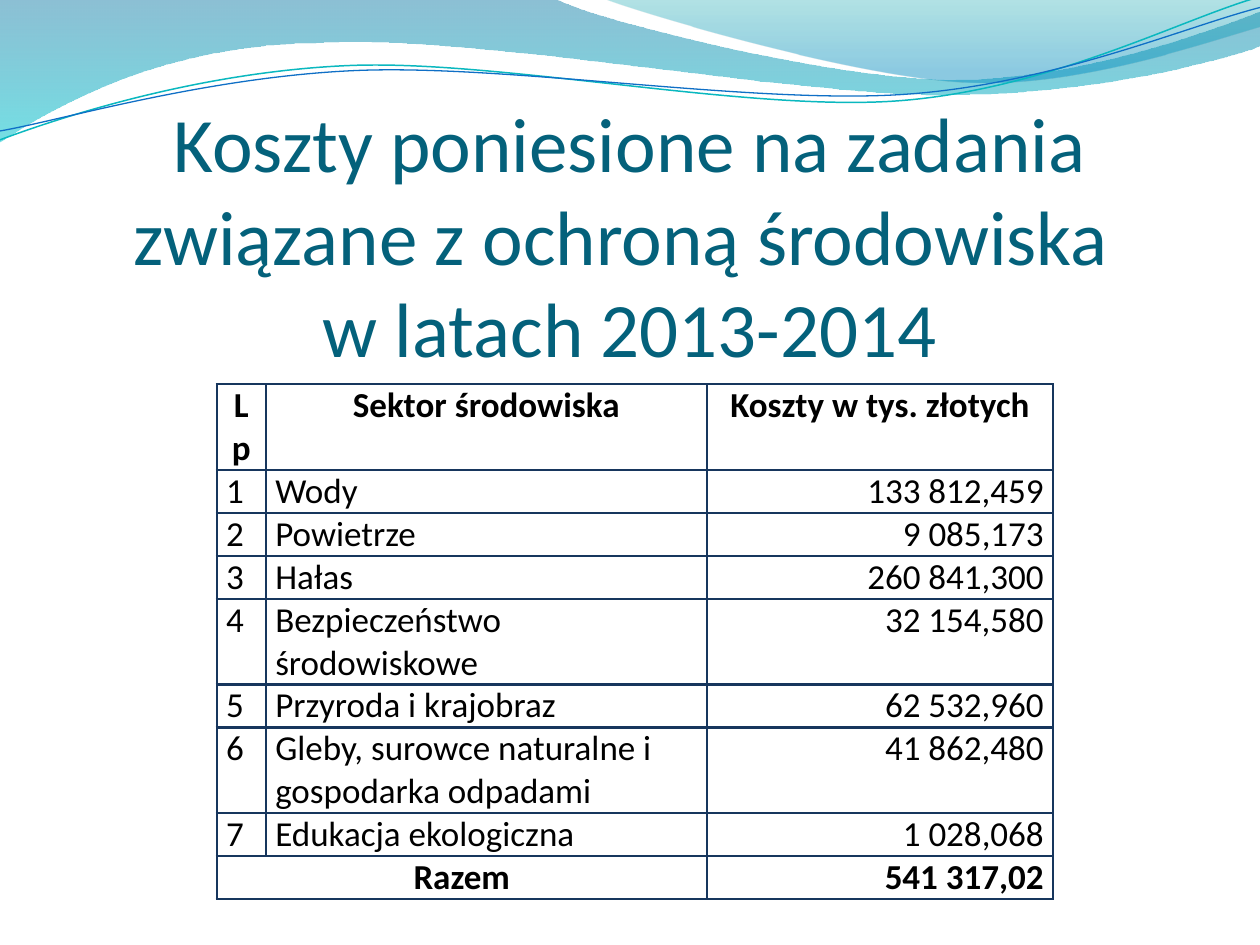
import math

import pptx
import pptx.dml.color
import pptx.enum.text
import pptx.oxml.ns
import pptx.util
from lxml import etree

Inches = pptx.util.Inches
Pt = pptx.util.Pt
RGBColor = pptx.dml.color.RGBColor
ALIGN = pptx.enum.text.PP_ALIGN
ANCHOR = pptx.enum.text.MSO_ANCHOR
qn = pptx.oxml.ns.qn

TITLE_COLOR = RGBColor(0x04, 0x61, 0x7B)
TEXT_COLOR = RGBColor(0x00, 0x00, 0x00)
BORDER_COLOR = RGBColor(0x17, 0x36, 0x5D)
DEEP_BLUE = RGBColor(0x00, 0x74, 0xA1)
CYAN = RGBColor(0x00, 0xC6, 0xCF)
TEAL = RGBColor(0x00, 0xA1, 0xA9)
SKY_BLUE = RGBColor(0x00, 0x8B, 0xBF)
TEAL_LINE = RGBColor(0x0A, 0xB8, 0xBF)
BLUE_LINE = RGBColor(0x0F, 0x6F, 0xC6)
STROKE_ROTATION = 357.3

LEFT_WAVE = [
    (0, -0.01), (4.4, -0.01),
    (4.76, 0.17, 6.64, 0.63, 7.58, 0.63), (8.53, 0.63, 9.58, 0.26, 10, 0.09),
    (10.01, 0.36),
    (9.83, 0.44, 8.7, 0.76, 7.46, 0.75), (6.22, 0.75, 3.82, 0.28, 2.57, 0.34),
    (1.29, 0.35, 0.46, 0.83, -0.01, 1.13), (0, -0.01),
]
RIGHT_WAVE = [
    (4.79, -0.01),
    (5.09, 0.11, 6.82, 0.62, 7.69, 0.65), (8.56, 0.69, 9.61, 0.32, 10, 0.21),
    (10, 0), (4.79, -0.01),
]
TEAL_STROKE = [
    (0, 1.11),
    (0.48, 0.93, 1.58, 0.57, 2.77, 0.52), (3.95, 0.47, 5.93, 0.89, 7.13, 0.8),
    (8.33, 0.71, 9.38, 0.15, 9.98, -0.02),
]
BLUE_STROKE = [
    (0, 1.04),
    (0.47, 0.96, 1.64, 0.61, 2.83, 0.56), (4.03, 0.51, 5.97, 0.83, 7.17, 0.75),
    (8.36, 0.67, 9.41, 0.21, 10, 0.06),
]

HEADER = ("Lp", "Sektor środowiska", "Koszty w tys. złotych")
COSTS = [
    ("Wody", "133 812,459"),
    ("Powietrze", "9 085,173"),
    ("Hałas", "260 841,300"),
    ("Bezpieczeństwo środowiskowe", "32 154,580"),
    ("Przyroda i krajobraz", "62 532,960"),
    ("Gleby, surowce naturalne i gospodarka odpadami", "41 862,480"),
    ("Edukacja ekologiczna", "1 028,068"),
]
TOTAL = "541 317,02"
COLUMN_WIDTHS = (0.39, 3.5, 2.75)
ROW_HEIGHT = 0.27


def split_points(segment):
    return list(zip(segment[::2], segment[1::2]))


def turn_segment(segment, center, degrees):
    cosine, sine = math.cos(math.radians(degrees)), math.sin(math.radians(degrees))
    turned = []
    for x, y in split_points(segment):
        dx, dy = x - center[0], y - center[1]
        turned += [center[0] + dx * cosine - dy * sine,
                   center[1] + dx * sine + dy * cosine]
    return tuple(turned)


def add_curve(page, segments, close):
    points = [
        (Inches(x), Inches(y))
        for segment in segments for x, y in split_points(segment)
    ]
    builder = page.shapes.build_freeform(*points[0])
    builder.add_line_segments(points[1:], close=close)
    curve = builder.convert_to_shape()
    curve.shadow.inherit = False
    corners = iter(list(curve._element.iter(qn("a:lnTo"))))
    for segment in segments[1:]:
        group = [next(corners) for _ in split_points(segment)]
        if len(group) == 3:
            bezier = etree.Element(qn("a:cubicBezTo"))
            group[0].addprevious(bezier)
            for corner in group:
                bezier.append(corner[0])
                corner.getparent().remove(corner)
    return curve


def add_wave(page, segments, stops):
    wave = add_curve(page, segments, close=True)
    wave.line.fill.background()
    wave.fill.gradient()
    wave.fill.gradient_angle = 270
    for stop, (position, color, _) in zip(wave.fill.gradient_stops, stops):
        stop.position = position
        stop.color.rgb = color
    for color_node, (_, _, opacity) in zip(wave._element.iter(qn("a:srgbClr")), stops):
        etree.SubElement(color_node, qn("a:alpha"), val=str(opacity * 1000))


def add_stroke(page, segments, center, color, width):
    level = [turn_segment(segment, center, -STROKE_ROTATION) for segment in segments]
    stroke = add_curve(page, level, close=False)
    stroke.rotation = STROKE_ROTATION
    stroke.fill.background()
    stroke.line.color.rgb = color
    stroke.line.width = Pt(width)


def write_text(frame, text, size, color, align=ALIGN.LEFT, bold=False):
    para = frame.paragraphs[0]
    para.text = text
    para.alignment = align
    for span in para.runs:
        span.font.name = "Calibri"
        span.font.size = Pt(size)
        span.font.bold = bold
        span.font.color.rgb = color


def place_title(page, text):
    title = page.shapes.title
    title.left, title.top = Inches(0.5), Inches(0.77)
    title.width, title.height = Inches(9), Inches(2.19)
    frame = title.text_frame
    frame.auto_size = pptx.enum.text.MSO_AUTO_SIZE.NONE
    frame.word_wrap = True
    frame.vertical_anchor = ANCHOR.BOTTOM
    frame.margin_left = frame.margin_right = frame.margin_bottom = 0
    frame.margin_top = Inches(0.05)
    write_text(frame, text, 44, TITLE_COLOR, align=ALIGN.CENTER)
    page.shapes._spTree.append(title._element)


def format_cell(cell):
    cell.margin_left = cell.margin_right = Pt(5.4)
    cell.margin_top = cell.margin_bottom = 0
    cell.vertical_anchor = ANCHOR.TOP
    properties = cell._tc.get_or_add_tcPr()
    for side in ("a:lnL", "a:lnR", "a:lnT", "a:lnB"):
        border = etree.SubElement(properties, qn(side), w=str(Pt(1.5)))
        solid = etree.SubElement(border, qn("a:solidFill"))
        etree.SubElement(solid, qn("a:srgbClr"), val=str(BORDER_COLOR))
    cell.fill.background()


def add_cost_table(page):
    rows = [HEADER]
    rows += [(str(number), *cost) for number, cost in enumerate(COSTS, 1)]
    rows.append(("Razem", "", TOTAL))
    last = len(rows) - 1
    table = page.shapes.add_table(
        len(rows), len(HEADER), Inches(1.72), Inches(3.05),
        Inches(sum(COLUMN_WIDTHS)), Inches(4),
    ).table
    table.first_row = table.horz_banding = False
    for column, width in zip(table.columns, COLUMN_WIDTHS):
        column.width = Inches(width)
    body_aligns = (ALIGN.JUSTIFY, ALIGN.LEFT, ALIGN.RIGHT)
    total_aligns = (ALIGN.CENTER, ALIGN.CENTER, ALIGN.RIGHT)
    for r, values in enumerate(rows):
        table.rows[r].height = Inches(ROW_HEIGHT)
        aligns = {0: (ALIGN.CENTER,) * 3, last: total_aligns}.get(r, body_aligns)
        for c, (value, align) in enumerate(zip(values, aligns)):
            cell = table.cell(r, c)
            format_cell(cell)
            if value:
                write_text(cell.text_frame, value, 20, TEXT_COLOR,
                           align=align, bold=r in (0, last))
    table.cell(last, 0).merge(table.cell(last, 1))


def main():
    deck = pptx.Presentation()
    deck.slide_width, deck.slide_height = Inches(10), Inches(7.5)
    page = deck.slides.add_slide(deck.slide_layouts[5])
    add_wave(page, LEFT_WAVE, [(0, DEEP_BLUE, 45), (1, CYAN, 55)])
    add_wave(page, RIGHT_WAVE, [(0, TEAL, 30), (0.8, SKY_BLUE, 45)])
    add_stroke(page, TEAL_STROKE, (4.99, 0.58), TEAL_LINE, 0.85)
    add_stroke(page, BLUE_STROKE, (5, 0.59), BLUE_LINE, 0.75)
    place_title(page, "Koszty poniesione na zadania związane z ochroną środowiska \vw latach 2013-2014")
    add_cost_table(page)
    deck.save("out.pptx")


if __name__ == "__main__":
    main()
